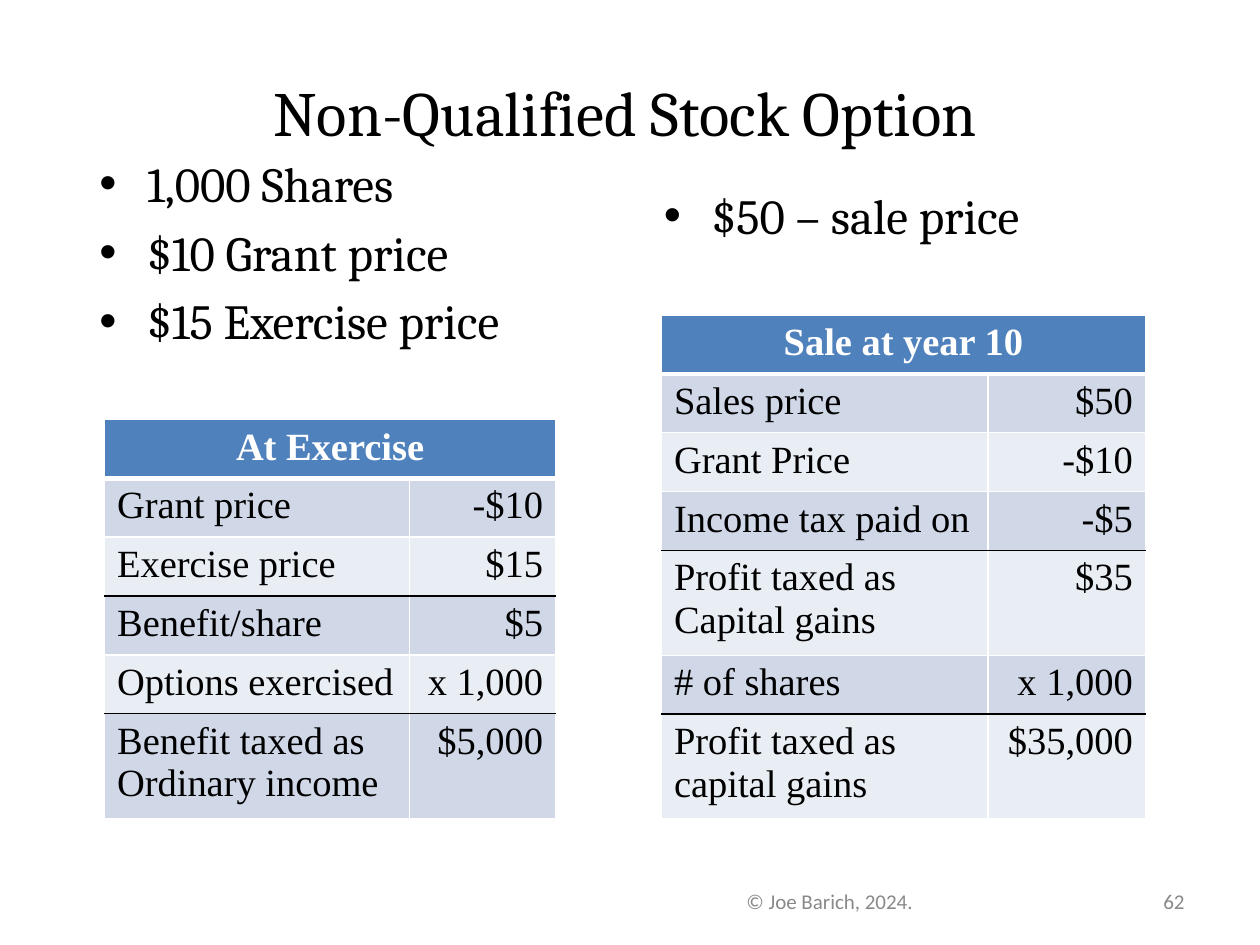
from lxml.etree import SubElement
from pptx import Presentation
from pptx.dml.color import RGBColor
from pptx.enum.text import MSO_ANCHOR, PP_ALIGN
from pptx.oxml import parse_xml
from pptx.oxml.ns import nsdecls, qn
from pptx.util import Inches, Pt

BLACK = RGBColor(0x00, 0x00, 0x00)
WHITE = RGBColor(0xFF, 0xFF, 0xFF)
GREY = RGBColor(0x89, 0x89, 0x89)
HEADER_BLUE = RGBColor(0x4F, 0x81, 0xBD)
BAND_DARK = RGBColor(0xD0, 0xD8, 0xE8)
BAND_LIGHT = RGBColor(0xE9, 0xED, 0xF4)


def write_lines(frame, text, font="Cambria", size=28, color=BLACK, bold=False,
                align=PP_ALIGN.LEFT, bullet=False, anchor=MSO_ANCHOR.TOP):
    frame.word_wrap = True
    frame.vertical_anchor = anchor
    for index, line in enumerate(text.split("\n")):
        para = frame.paragraphs[0] if index == 0 else frame.add_paragraph()
        para.alignment = align
        if bullet:
            properties = para._p.get_or_add_pPr()
            properties.set("marL", str(Inches(0.38)))
            properties.set("indent", str(Inches(-0.38)))
            SubElement(properties, qn("a:buFont"), typeface="Arial")
            SubElement(properties, qn("a:buChar"), char="•")
        if index:
            para.space_before = Pt(size * 0.2)
        span = para.add_run()
        span.text = line
        span.font.name = font
        span.font.size = Pt(size)
        span.font.bold = bold
        span.font.color.rgb = color


def set_borders(cell, top, bottom):
    edges = [("lnL", WHITE, 1), ("lnR", WHITE, 1), ("lnT", *top), ("lnB", *bottom)]
    properties = cell._tc.get_or_add_tcPr()
    for position, (tag, color, width) in enumerate(edges):
        properties.insert(position, parse_xml(
            f'<a:{tag} {nsdecls("a")} w="{Pt(width)}"><a:solidFill>'
            f'<a:srgbClr val="{color}"/></a:solidFill></a:{tag}>'))


deck = Presentation()
deck.slide_width = Inches(10)
deck.slide_height = Inches(7.5)
page = deck.slides.add_slide(deck.slide_layouts[6])

footer = dict(font="Calibri", size=12, color=GREY, anchor=MSO_ANCHOR.MIDDLE)
texts = [
    ((0.25, 0.17, 9.42, 1.42), "Non-Qualified Stock Option",
     dict(size=36, align=PP_ALIGN.CENTER, anchor=MSO_ANCHOR.MIDDLE)),
    ((0.69, 1.17, 3.97, 5.58), "1,000 Shares\n$10 Grant price\n$15 Exercise price",
     dict(bullet=True)),
    ((5.17, 1.42, 4.33, 4.75), "$50 – sale price", dict(bullet=True)),
    ((8.33, 6.95, 1.17, 0.4), "62", dict(footer, align=PP_ALIGN.RIGHT)),
    ((5, 6.95, 3.17, 0.4), "© Joe Barich, 2024.", dict(footer, align=PP_ALIGN.CENTER)),
]
for place, text, style in texts:
    box = page.shapes.add_textbox(*map(Inches, place))
    write_lines(box.text_frame, text, **style)

exercise_rows = [
    ("At Exercise", ""),
    ("Grant price", "-$10"),
    ("Exercise price", "$15"),
    ("Benefit/share", "$5"),
    ("Options exercised", "x 1,000"),
    ("Benefit taxed as Ordinary income", "$5,000"),
]
sale_rows = [
    ("Sale at year 10", ""),
    ("Sales price", "$50"),
    ("Grant Price", "-$10"),
    ("Income tax paid on", "-$5"),
    ("Profit taxed as Capital gains", "$35"),
    ("# of shares", "x 1,000"),
    ("Profit taxed as capital gains", "$35,000"),
]
tables = [
    (0.83, 3.33, (2.42, 1.16), exercise_rows, (3, 5)),
    (5.25, 2.5, (2.59, 1.25), sale_rows, (4, 6)),
]
for left, top, widths, rows, total_rows in tables:
    table = page.shapes.add_table(
        len(rows), 2, Inches(left), Inches(top),
        Inches(sum(widths)), Inches(0.43 * len(rows))).table
    for column, width in zip(table.columns, widths):
        column.width = Inches(width)
    table.cell(0, 0).merge(table.cell(0, 1))

    edges = [(WHITE, 1)] * (len(rows) + 1)
    edges[1] = (WHITE, 3)
    for total_row in total_rows:
        edges[total_row] = (BLACK, 1)

    for row, values in enumerate(rows):
        table.rows[row].height = Inches(0.43)
        band = BAND_DARK if row % 2 else BAND_LIGHT
        for column, value in enumerate(values):
            cell = table.cell(row, column)
            cell.fill.solid()
            cell.fill.fore_color.rgb = band if row else HEADER_BLUE
            set_borders(cell, edges[row], edges[row + 1])
            if value:
                align = PP_ALIGN.RIGHT if column else PP_ALIGN.LEFT
                write_lines(cell.text_frame, value, font="Times New Roman", size=22,
                            color=BLACK if row else WHITE, bold=row == 0,
                            align=align if row else PP_ALIGN.CENTER)

deck.save("out.pptx")
